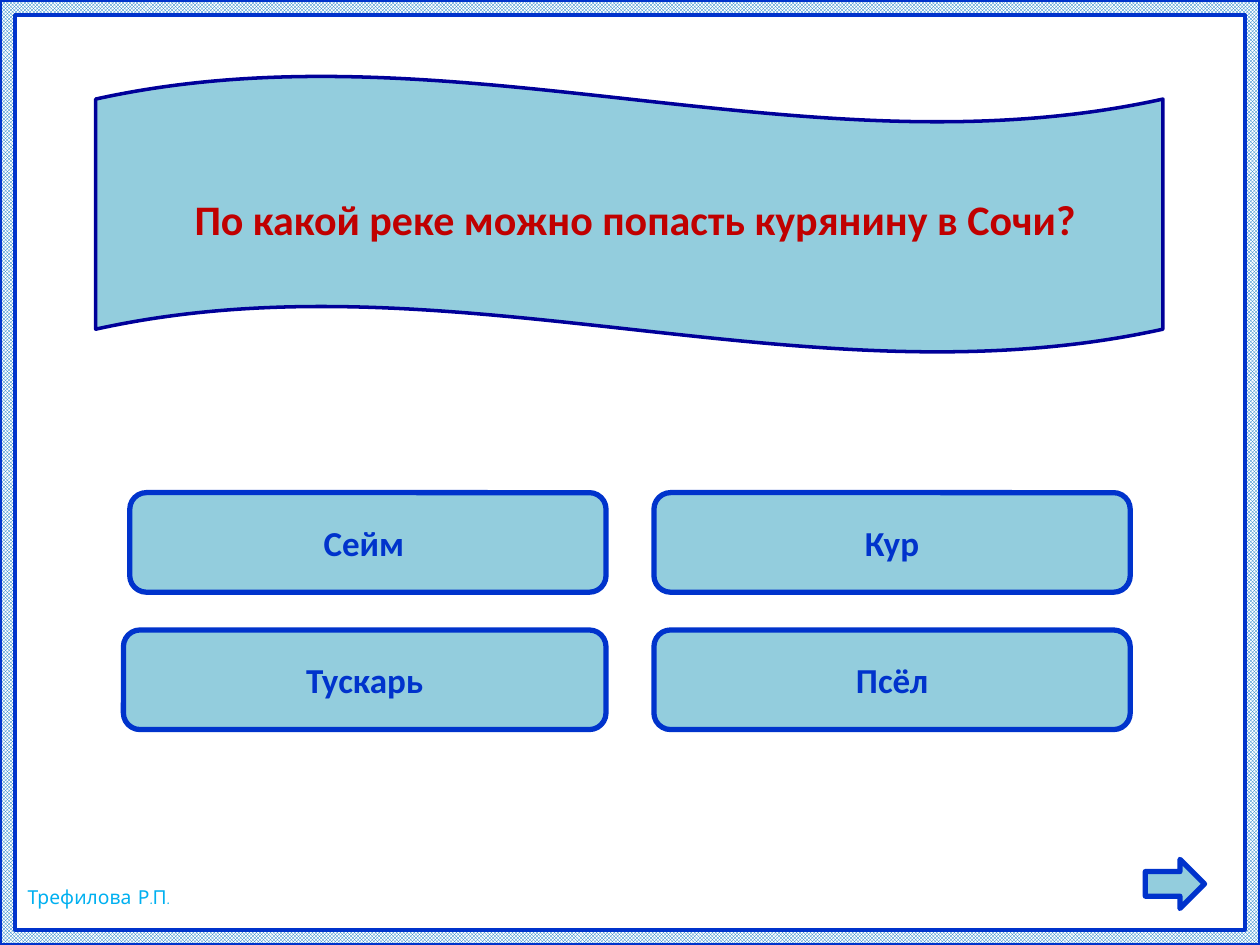
from pptx import Presentation
from pptx.dml.color import RGBColor
from pptx.enum.dml import MSO_PATTERN
from pptx.enum.shapes import MSO_SHAPE as Shape
from pptx.enum.text import MSO_ANCHOR, PP_ALIGN
from pptx.util import Inches, Pt

LIGHT_BLUE, BLUE, NAVY = "93CDDD", "0033CC", "000099"


def rgb(color):
    return RGBColor.from_string(color)


def add_panel(kind, box, line, width, runs=()):
    """Add a light blue shape with centred bold runs of (text, size, colour)."""
    panel = slide.shapes.add_shape(kind, *map(Inches, box))
    panel.shadow.inherit = False
    panel.fill.solid()
    panel.fill.fore_color.rgb = rgb(LIGHT_BLUE)
    panel.line.color.rgb = rgb(line)
    panel.line.width = Pt(width)
    panel.text_frame.vertical_anchor = MSO_ANCHOR.MIDDLE
    paragraph = panel.text_frame.paragraphs[0]
    paragraph.alignment = PP_ALIGN.CENTER
    for text, size, color in runs:
        run = paragraph.add_run()
        run.text = text
        for key, value in {"name": "Calibri", "size": Pt(size), "bold": True}.items():
            setattr(run.font, key, value)
        run.font.color.rgb = rgb(color)
    return panel


prs = Presentation()
prs.slide_width, prs.slide_height = Inches(10), Inches(7.5)
slide = prs.slides.add_slide(prs.slide_layouts[6])
slide.background.fill.solid()
slide.background.fill.fore_color.rgb = rgb("FFFFFF")

# Checkered border
border = add_panel(Shape.FRAME, (0, 0, 10, 7.5), BLUE, 2)
border.adjustments[0] = 0.016
border.fill.patterned()
border.fill.pattern = MSO_PATTERN.SMALL_CHECKER_BOARD
border.fill.fore_color.rgb = rgb("0070C0")
border.fill.back_color.rgb = rgb("FFFFFF")

# Author
author = slide.shapes.add_textbox(Inches(0.12), Inches(6.98), Inches(1.42), Inches(0.29))
author.text_frame.word_wrap = False
author.text_frame.text = "Трефилова Р.П."
author_font = author.text_frame.paragraphs[0].runs[0].font
author_font.name = "Comic Neue"
author_font.size = Pt(11)
author_font.color.rgb = rgb("00B0F0")

# Question
question = add_panel(Shape.WAVE, (0.76, 0.6, 8.47, 2.2), NAVY, 2, [
    (" ", 30, "002060"),
    ("По какой реке можно попасть курянину в Сочи?", 24, "C00000"),
])
question.adjustments[0] = 0.085
question.adjustments[1] = 0

# Answers: text, left, top, width
ROW_1, ROW_2 = 3.91, 5
answers = [
    ("Кур", 5.19, ROW_1, 3.78),
    ("Псёл", 5.19, ROW_2, 3.78),
    ("Тускарь", 0.98, ROW_2, 3.83),
    ("Сейм ", 1.03, ROW_1, 3.78),
]
for answer, left, top, width in answers:
    add_panel(Shape.ROUNDED_RECTANGLE, (left, top, width, 0.79), BLUE, 3,
              [(answer, 20, BLUE)])

# Next-slide arrow
add_panel(Shape.RIGHT_ARROW, (9.09, 6.82, 0.47, 0.39), BLUE, 3)

prs.save("out.pptx")
